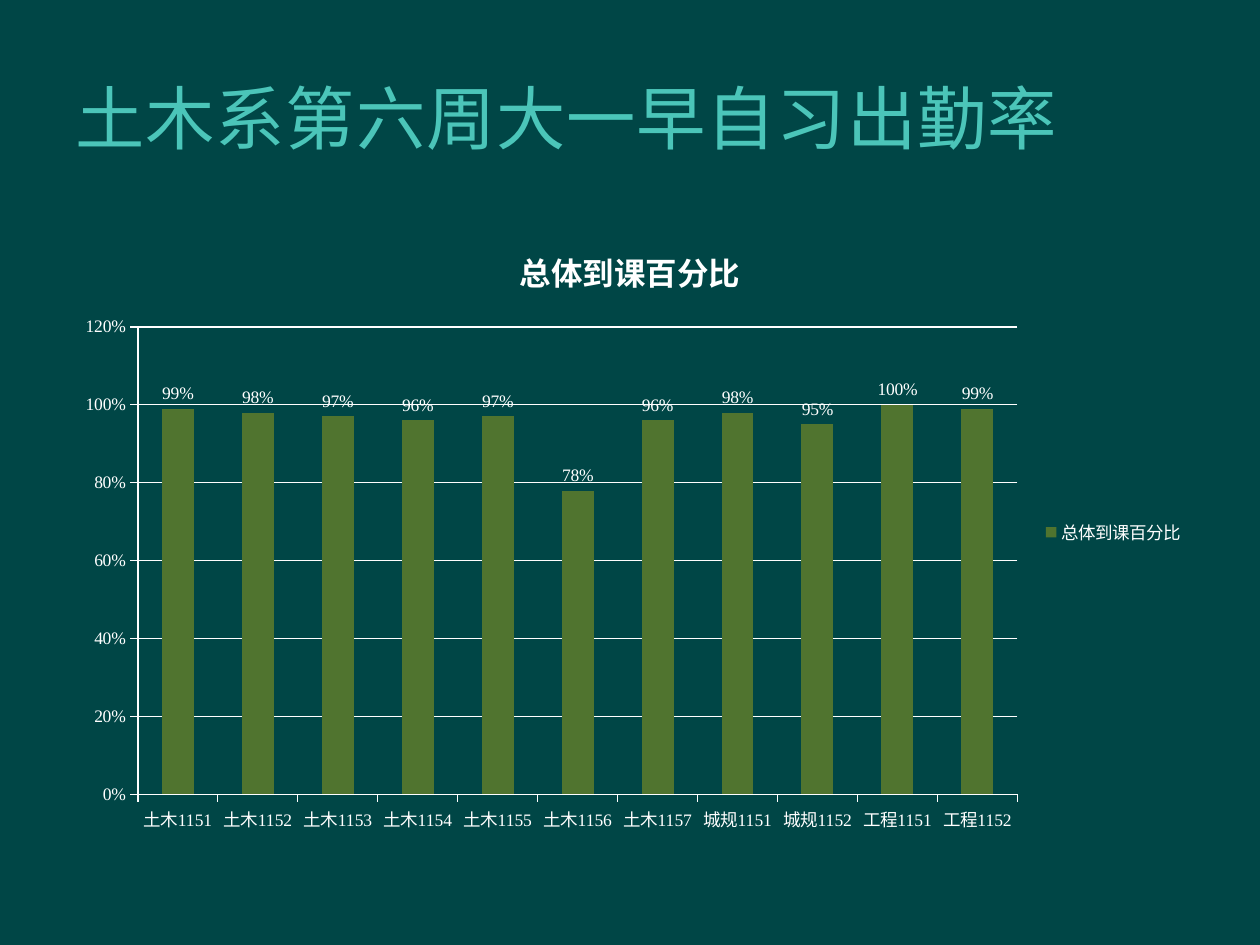
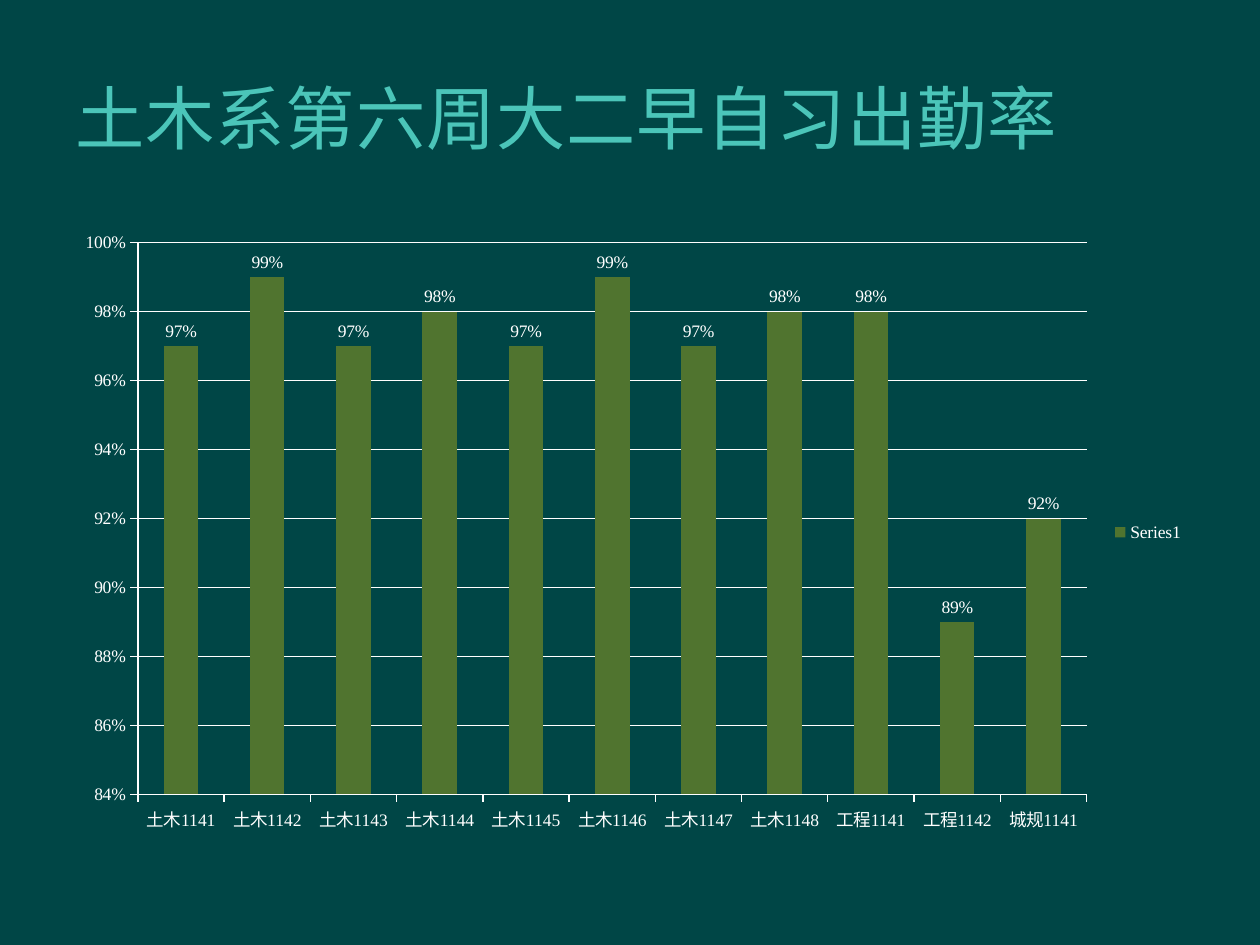
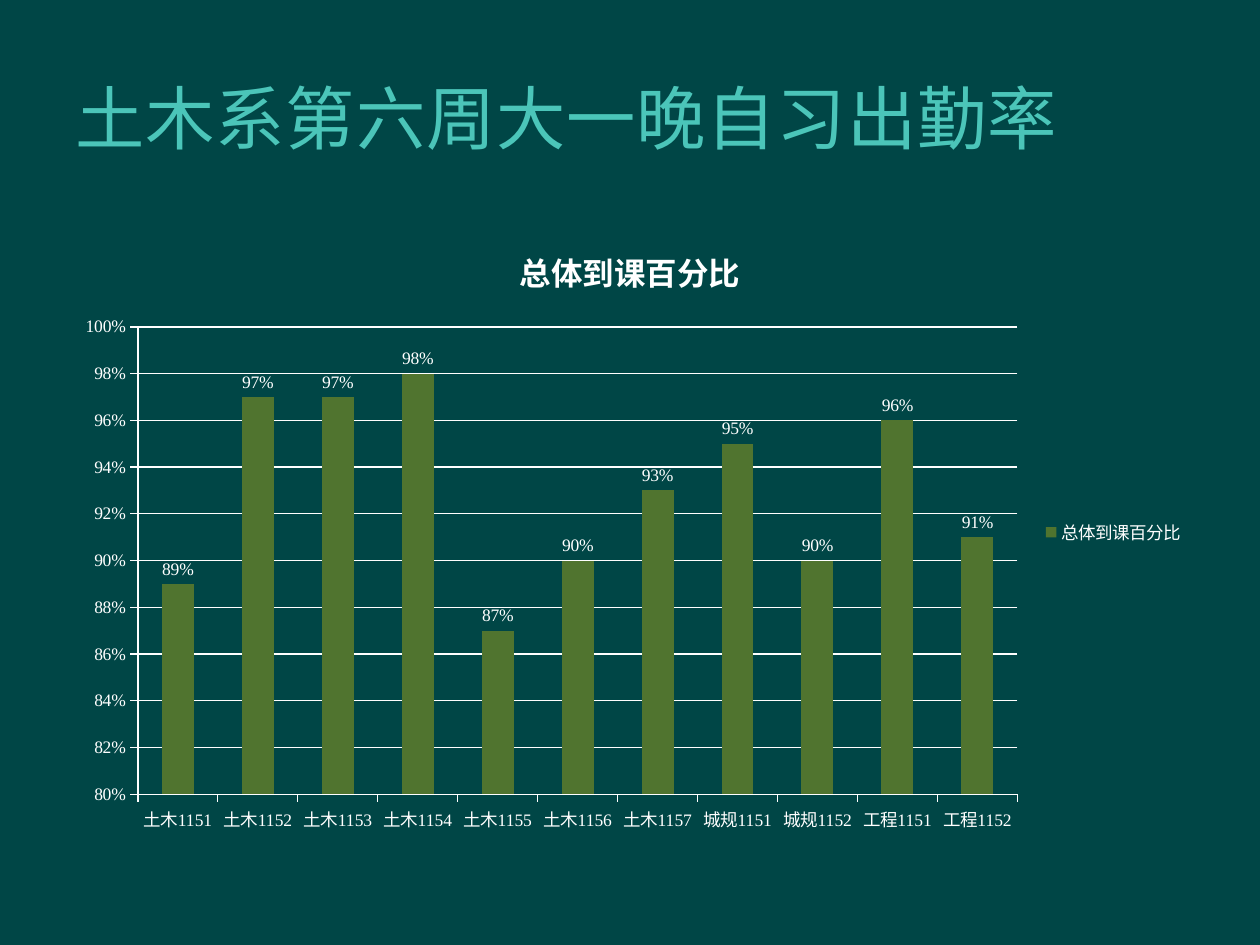
from dataclasses import dataclass

import pptx
import pptx.chart.axis
import pptx.chart.chart
import pptx.chart.data
import pptx.dml.color
import pptx.dml.line
import pptx.enum.chart
import pptx.enum.text
import pptx.presentation
import pptx.slide
import pptx.text.text
import pptx.util

EMU_PER_PX = 9144
BACKGROUND = "004646"
TITLE_COLOUR = "4BC5B9"
WHITE = "FFFFFF"
BAR_COLOUR = "50742F"
TITLE_FONT = "Arial"
CHART_FONT = "Times New Roman"
TITLE_BOX = (50, 30, 850, 125)
CHART_BOX = (50, 175, 900, 495)
PERCENT = "0%"


@dataclass(frozen=True)
class Attendance:
    heading: str
    chart_title: str
    series_name: str
    classes: list[str]
    percents: list[int]
    lowest: int
    highest: int
    step: int


def class_names(major: str, year: int, count: int) -> list[str]:
    return [f"{major}{year}{number}" for number in range(1, count + 1)]


FIRST_YEAR = class_names("土木", 115, 7) + class_names("城规", 115, 2) + class_names("工程", 115, 2)
SECOND_YEAR = class_names("土木", 114, 8) + class_names("工程", 114, 2) + class_names("城规", 114, 1)
OVERALL = "总体到课百分比"

REPORTS = [
    Attendance("土木系第六周大一早自习出勤率", OVERALL, OVERALL, FIRST_YEAR,
               [99, 98, 97, 96, 97, 78, 96, 98, 95, 100, 99], 0, 120, 20),
    Attendance("土木系第六周大二早自习出勤率", "", "Series1", SECOND_YEAR,
               [97, 99, 97, 98, 97, 99, 97, 98, 98, 89, 92], 84, 100, 2),
    Attendance("土木系第六周大一晚自习出勤率", OVERALL, OVERALL, FIRST_YEAR,
               [89, 97, 97, 98, 87, 90, 93, 95, 90, 96, 91], 80, 100, 2),
]


def px(length: int) -> pptx.util.Emu:
    return pptx.util.Emu(length * EMU_PER_PX)


def colour(value: str) -> pptx.dml.color.RGBColor:
    return pptx.dml.color.RGBColor.from_string(value)


def style_font(font: pptx.text.text.Font, name: str, size: float, value: str, bold: bool = False) -> None:
    font.name = name
    font.size = pptx.util.Pt(size)
    font.bold = bold
    font.color.rgb = colour(value)


def style_line(line: pptx.dml.line.LineFormat) -> None:
    line.color.rgb = colour(WHITE)
    line.width = pptx.util.Pt(0.75)


def add_heading(page: pptx.slide.Slide, text: str) -> None:
    box = page.shapes.title
    box.left, box.top, box.width, box.height = map(px, TITLE_BOX)
    frame = box.text_frame
    frame.word_wrap = True
    frame.auto_size = pptx.enum.text.MSO_AUTO_SIZE.NONE
    frame.vertical_anchor = pptx.enum.text.MSO_ANCHOR.MIDDLE
    para = frame.paragraphs[0]
    para.alignment = pptx.enum.text.PP_ALIGN.LEFT
    span = para.add_run()
    span.text = text
    style_font(span.font, TITLE_FONT, 39.6, TITLE_COLOUR)
    properties = span._r.get_or_add_rPr()
    properties.set("lang", "zh-CN")
    properties.set("spc", "50")


def style_axis(axis: pptx.chart.axis._BaseAxis) -> None:
    axis.major_tick_mark = pptx.enum.chart.XL_TICK_MARK.OUTSIDE
    axis.minor_tick_mark = pptx.enum.chart.XL_TICK_MARK.NONE
    style_line(axis.format.line)


def style_scale(chart: pptx.chart.chart.Chart, report: Attendance) -> None:
    axis = chart.value_axis
    style_axis(axis)
    axis.minimum_scale = report.lowest / 100
    axis.maximum_scale = report.highest / 100
    axis.major_unit = report.step / 100
    axis.has_major_gridlines = True
    style_line(axis.major_gridlines.format.line)
    axis.tick_labels.number_format = PERCENT
    axis.tick_labels.number_format_is_linked = False


def style_bars(chart: pptx.chart.chart.Chart) -> None:
    plot = chart.plots[0]
    plot.gap_width = 150
    plot.vary_by_categories = False
    bars = plot.series[0]
    bars.format.fill.solid()
    bars.format.fill.fore_color.rgb = colour(BAR_COLOUR)
    bars.format.line.fill.background()
    labels = bars.data_labels
    labels.show_value = True
    labels.number_format = PERCENT
    labels.number_format_is_linked = False
    labels.position = pptx.enum.chart.XL_LABEL_POSITION.OUTSIDE_END
    style_font(labels.font, CHART_FONT, 10, WHITE)


def add_attendance_chart(page: pptx.slide.Slide, report: Attendance) -> None:
    data = pptx.chart.data.CategoryChartData(number_format=PERCENT)
    data.categories = report.classes
    data.add_series(report.series_name, [percent / 100 for percent in report.percents])
    kind = pptx.enum.chart.XL_CHART_TYPE.COLUMN_CLUSTERED
    chart = page.shapes.add_chart(kind, *map(px, CHART_BOX), data).chart
    style_font(chart.font, CHART_FONT, 10, WHITE)
    chart.has_title = bool(report.chart_title)
    if report.chart_title:
        span = chart.chart_title.text_frame.paragraphs[0].add_run()
        span.text = report.chart_title
        style_font(span.font, CHART_FONT, 18, WHITE, bold=True)
    chart.has_legend = True
    chart.legend.position = pptx.enum.chart.XL_LEGEND_POSITION.RIGHT
    chart.legend.include_in_layout = False
    style_axis(chart.category_axis)
    style_scale(chart, report)
    style_bars(chart)


def add_report(deck: pptx.presentation.Presentation, report: Attendance) -> None:
    page = deck.slides.add_slide(deck.slide_layouts.get_by_name("Title Only"))
    add_heading(page, report.heading)
    add_attendance_chart(page, report)


def main() -> None:
    deck = pptx.Presentation()
    deck.slide_width, deck.slide_height = px(1000), px(750)
    backdrop = deck.slide_master.background.fill
    backdrop.solid()
    backdrop.fore_color.rgb = colour(BACKGROUND)
    for report in REPORTS:
        add_report(deck, report)
    deck.save("out.pptx")


if __name__ == "__main__":
    main()
